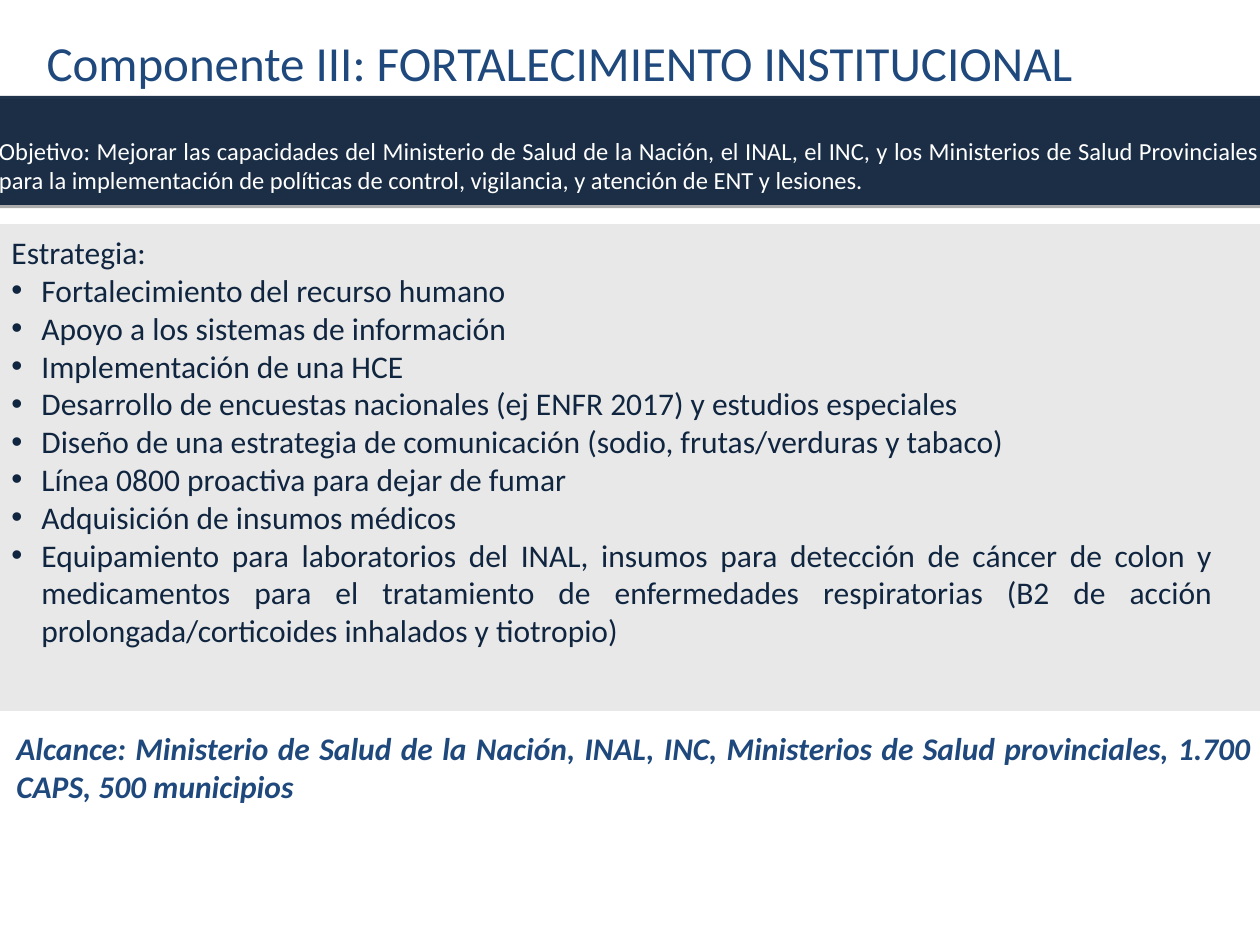
"""Build the slide on Componente III: institutional strengthening."""
from dataclasses import dataclass

from lxml import etree
from pptx import Presentation
from pptx.dml.color import RGBColor
from pptx.enum.shapes import MSO_SHAPE
from pptx.enum.text import MSO_ANCHOR, MSO_AUTO_SIZE, PP_ALIGN
from pptx.oxml.ns import qn
from pptx.util import Emu, Pt

RECT = MSO_SHAPE.RECTANGLE
TOP, MIDDLE = MSO_ANCHOR.TOP, MSO_ANCHOR.MIDDLE
GROW, FIXED = MSO_AUTO_SIZE.SHAPE_TO_FIT_TEXT, MSO_AUTO_SIZE.NONE
LEFT, JUSTIFY = PP_ALIGN.LEFT, PP_ALIGN.JUSTIFY
PX_PER_INCH = 126
BULLET_INDENT = 30


@dataclass(frozen=True)
class Theme:
    """Colours and type sizes of the slide."""
    font: str = "Calibri"
    blue: str = "1F497D"
    navy: str = "10253F"
    grey: str = "333333"
    white: str = "FFFFFF"
    black: str = "000000"
    title: int = 28
    body: int = 18
    small: int = 14


THEME = Theme()
TITLE = "Componente III: FORTALECIMIENTO INSTITUCIONAL"
OBJECTIVE = (
    "Objetivo: Mejorar las capacidades del Ministerio de Salud de la Nación, "
    "el INAL, el INC, y los Ministerios de Salud Provinciales para la "
    "implementación de políticas de control, vigilancia, y atención de ENT y lesiones."
)
STRATEGY = "Estrategia: "
ACTIONS = [
    "Fortalecimiento del recurso humano",
    "Apoyo a los sistemas de información",
    "Implementación de una HCE",
    "Desarrollo de encuestas nacionales (ej ENFR 2017) y estudios especiales",
    "Diseño de una estrategia de comunicación (sodio, frutas/verduras y tabaco)",
    "Línea 0800 proactiva para dejar de fumar",
    "Adquisición de insumos médicos ",
    "Equipamiento para laboratorios del INAL, insumos para detección de cáncer "
    "de colon y medicamentos para el tratamiento de enfermedades respiratorias "
    "(B2 de acción prolongada/corticoides inhalados y tiotropio)",
]
REACH = (
    "Alcance: Ministerio de Salud de la Nación, INAL, INC, Ministerios de Salud "
    "provinciales, 1.700 CAPS, 500 municipios"
)


def px(n):
    """Turn pixels into EMU."""
    return Emu(round(n * 914400 / PX_PER_INCH))


def format_paragraph(p, size, color, align=JUSTIFY, strong=False):
    """Set the alignment of a paragraph and the look of its runs."""
    p.alignment = align
    for r in p.runs:
        r.font.name = THEME.font
        r.font.size = Pt(size)
        r.font.color.rgb = RGBColor.from_string(color)
        if strong:
            r.font.bold = r.font.italic = True


def set_bullet(p):
    """Give a paragraph a round bullet and a hanging indent."""
    pPr = p._p.get_or_add_pPr()
    pPr.set("marL", str(px(BULLET_INDENT)))
    pPr.set("indent", str(-px(BULLET_INDENT)))
    etree.SubElement(pPr, qn("a:buFont"), typeface="Arial")
    etree.SubElement(pPr, qn("a:buChar"), char="•")


def set_alpha(color_el, percent):
    """Set the opacity of a colour element."""
    etree.SubElement(color_el, qn("a:alpha"), val=str(percent * 1000))


def add_title(s, text, box):
    """Place and format the title placeholder."""
    sp = s.shapes.title
    sp.left, sp.top, sp.width, sp.height = map(px, box)
    tf = sp.text_frame
    tf.text = text
    tf.word_wrap = True
    tf.auto_size = FIXED
    tf.vertical_anchor = TOP
    format_paragraph(tf.paragraphs[0], THEME.title, THEME.blue, LEFT)


def add_panel(s, box, color, opacity):
    """Add a borderless translucent rectangle."""
    sp = s.shapes.add_shape(RECT, *map(px, box))
    sp.fill.solid()
    sp.fill.fore_color.rgb = RGBColor.from_string(color)
    set_alpha(sp._element.spPr.find(".//" + qn("a:srgbClr")), opacity)
    sp.line.fill.background()
    sp.shadow.inherit = False
    return sp


def add_shadow(sp):
    """Add a thin shadow below a shape."""
    effects = sp._element.spPr.find(qn("a:effectLst"))
    shadow = etree.SubElement(
        effects, qn("a:outerShdw"), blurRad="0", dist=str(Pt(1.8)),
        dir="5400000", rotWithShape="0")
    set_alpha(etree.SubElement(shadow, qn("a:srgbClr"), val=THEME.black), 35)


def add_banner(s, text, box):
    """Add the dark band that states the objective."""
    sp = add_panel(s, box, THEME.navy, 93)
    add_shadow(sp)
    tf = sp.text_frame
    tf.text = text
    tf.word_wrap = True
    tf.vertical_anchor = MIDDLE
    tf.margin_left = tf.margin_right = tf.margin_bottom = 0
    tf.margin_top = px(30)
    format_paragraph(tf.paragraphs[0], THEME.small, THEME.white)


def add_text(s, lead, box, color, bullets=(), strong=False):
    """Add a text box with a lead line and optional bullets."""
    tf = s.shapes.add_textbox(*map(px, box)).text_frame
    tf.word_wrap = True
    tf.auto_size = GROW
    tf.text = lead
    for text in bullets:
        p = tf.add_paragraph()
        p.text = text
        set_bullet(p)
    for p in tf.paragraphs:
        format_paragraph(p, THEME.body, color, strong=strong)


def main():
    """Build and save the slide."""
    prs = Presentation()
    prs.slide_width, prs.slide_height = px(1260), px(945)
    s = prs.slides.add_slide(prs.slide_layouts.get_by_name("Title Only"))
    add_title(s, TITLE, (34, 26, 1131, 58))
    add_banner(s, OBJECTIVE, (-1, 96, 1261, 109))
    add_panel(s, (0, 224, 1264, 487), THEME.grey, 11)
    add_text(s, STRATEGY, (-1, 227, 1226, 432), THEME.navy, ACTIONS)
    add_text(s, REACH, (4, 723, 1260, 89), THEME.blue, strong=True)
    prs.save("out.pptx")


if __name__ == "__main__":
    main()
